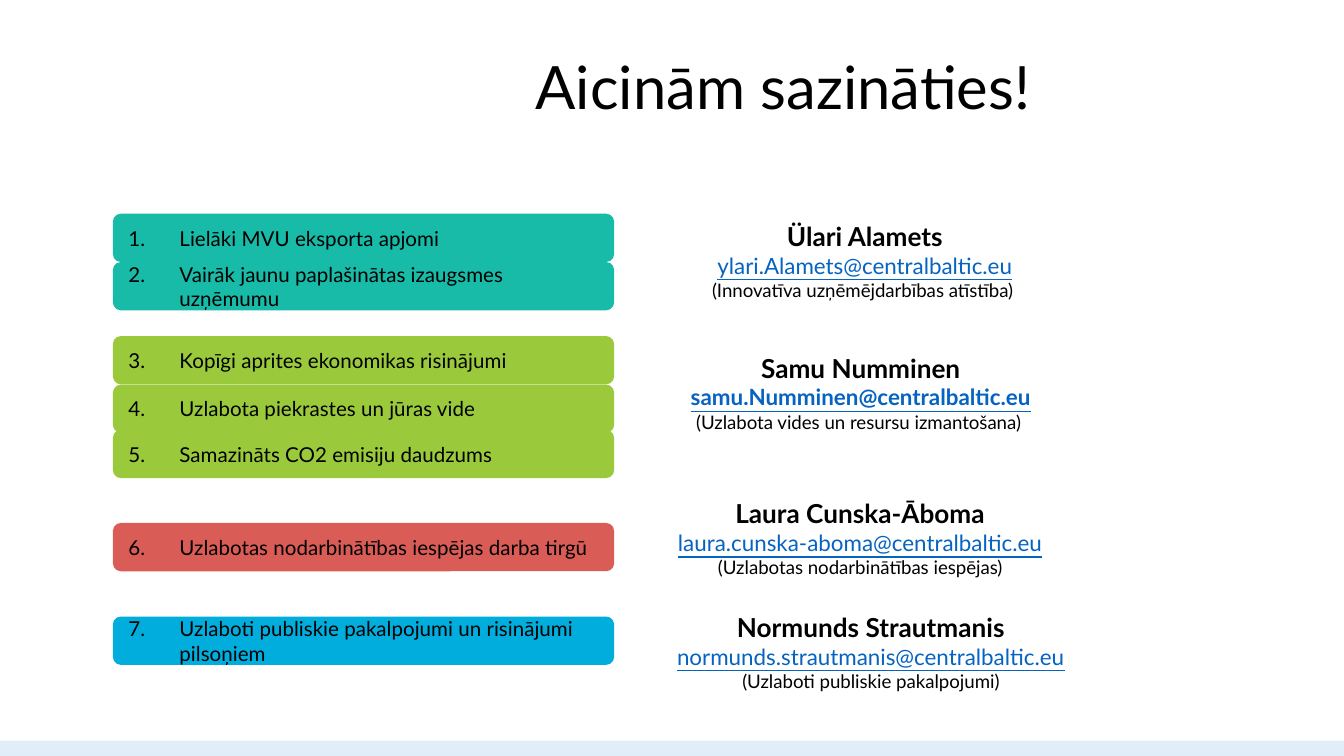
from lxml import etree
from pptx import Presentation
from pptx.dml.color import RGBColor
from pptx.enum.shapes import MSO_SHAPE
from pptx.enum.text import MSO_ANCHOR, MSO_AUTO_SIZE, PP_ALIGN
from pptx.oxml.ns import qn
from pptx.util import Inches, Pt

RECT, ROUNDED = MSO_SHAPE.RECTANGLE, MSO_SHAPE.ROUNDED_RECTANGLE
MIDDLE, NO_FIT = MSO_ANCHOR.MIDDLE, MSO_AUTO_SIZE.NONE
LEFT, CENTER = PP_ALIGN.LEFT, PP_ALIGN.CENTER
WIDTH = Inches(10)
HEIGHT = WIDTH * 9 // 16
FONT, BLACK, LINK = "Lato", "000000", "0563C1"
TEAL, GREEN, RED, BLUE = "18BAA8", "9ACA3C", "DA5C57", "00ADDC"
BAR_LEFT, BAR_WIDTH, BAR_HEIGHT = 8.4, 37.3, 6.4
INDENT = Inches(0.38)
BREAK, PARAGRAPH = "break", "paragraph"

GOALS = [
    (28.27, TEAL, "Lielāki MVU eksporta apjomi"),
    (34.67, TEAL, "Vairāk jaunu paplašinātas izaugsmes uzņēmumu"),
    (44.46, GREEN, "Kopīgi aprites ekonomikas risinājumi"),
    (50.88, GREEN, "Uzlabota piekrastes un jūras vide"),
    (56.86, GREEN, "Samazināts CO2 emisiju daudzums"),
    (69.18, RED, "Uzlabotas nodarbinātības iespējas darba tirgū"),
    (81.56, BLUE, "Uzlaboti publiskie pakalpojumi un risinājumi pilsoņiem"),
]
CONTACTS = [
    ((51.4, 28.27, 25.9, 11.91), "Ülari Alamets", "ylari.Alamets@centralbaltic.eu",
     "(Innovatīva uzņēmējdarbības atīstība) ", False, (PARAGRAPH, BREAK)),
    ((49.5, 45.72, 29.1, 14.22), "Samu Numminen", "samu.Numminen@centralbaltic.eu",
     "(Uzlabota vides un resursu izmantošana) ", True, (PARAGRAPH, BREAK)),
    ((48.6, 64.93, 30.8, 14.93), "Laura Cunska-Āboma", "laura.cunska-aboma@centralbaltic.eu",
     "(Uzlabotas nodarbinātības iespējas)", False, (PARAGRAPH, PARAGRAPH)),
    ((48.6, 80, 32.4, 13.69), "Normunds Strautmanis", "normunds.strautmanis@centralbaltic.eu",
     "(Uzlaboti publiskie pakalpojumi)", False, (BREAK, BREAK)),
]


def rgb(value):
    """Return the colour for a hex string."""
    return RGBColor.from_string(value)


def place(box):
    """Turn percentages of the slide into left, top, width and height."""
    left, top, width, height = box
    return (round(WIDTH * left / 100), round(HEIGHT * top / 100),
            round(WIDTH * width / 100), round(HEIGHT * height / 100))


def add_run(p, text, size, color=BLACK, bold=False, underline=False):
    """Add one formatted run to a paragraph."""
    r = p.add_run()
    r.text = text
    r.font.name, r.font.size = FONT, Pt(size)
    r.font.bold, r.font.underline = bold, underline
    r.font.color.rgb = rgb(color)


def add_block(shapes, kind, box, color):
    """Add a plain filled shape."""
    sp = shapes.add_shape(kind, *place(box))
    sp.shadow.inherit = False
    sp.fill.solid()
    sp.fill.fore_color.rgb = rgb(color)
    sp.line.fill.background()
    return sp


def add_title(s, box, text):
    """Place and format the title placeholder."""
    sp = s.shapes.title
    sp.left, sp.top, sp.width, sp.height = place(box)
    tf = sp.text_frame
    tf.auto_size, tf.vertical_anchor = NO_FIT, MIDDLE
    p = tf.paragraphs[0]
    p.alignment, p.line_spacing = LEFT, 0.9
    add_run(p, text, 32)


def add_goal(shapes, box, color, number, text):
    """Add one numbered goal bar."""
    tf = add_block(shapes, ROUNDED, box, color).text_frame
    tf.word_wrap, tf.vertical_anchor = True, MIDDLE
    p = tf.paragraphs[0]
    p.alignment = LEFT
    pPr = p._p.get_or_add_pPr()
    pPr.set("marL", str(INDENT))
    pPr.set("indent", str(-INDENT))
    etree.SubElement(pPr, qn("a:buFont"), typeface="+mj-lt")
    etree.SubElement(pPr, qn("a:buAutoNum"), type="arabicPeriod", startAt=str(number))
    add_run(p, text, 11)


def add_contact(s, box, name, email, field, bold_email, joints):
    """Add a contact's name, e-mail address and field."""
    tf = s.shapes.add_textbox(*place(box)).text_frame
    tf.word_wrap = True
    p = tf.paragraphs[0]
    p.alignment = CENTER
    add_run(p, name, 14, bold=True)
    details = [(email, 12, LINK, bold_email, True), (field, 10)]
    for joint, detail in zip(joints, details):
        if joint == BREAK:
            p.add_line_break()
        else:
            p = tf.add_paragraph()
            p.alignment = CENTER
        add_run(p, *detail)


def main():
    """Build and save the contact slide."""
    prs = Presentation()
    prs.slide_width, prs.slide_height = WIDTH, HEIGHT
    s = prs.slides.add_slide(prs.slide_layouts[5])
    add_block(s.shapes, RECT, (0, 97.96, 100, 2.04), "E1EEF9")
    add_title(s, (38.85, 4.62, 51.9, 14.58), "Aicinām sazināties!")
    bars = s.shapes.add_group_shape().shapes
    for number, (top, color, text) in enumerate(GOALS, 1):
        add_goal(bars, (BAR_LEFT, top, BAR_WIDTH, BAR_HEIGHT), color, number, text)
    for contact in CONTACTS:
        add_contact(s, *contact)
    prs.save("out.pptx")


if __name__ == "__main__":
    main()
